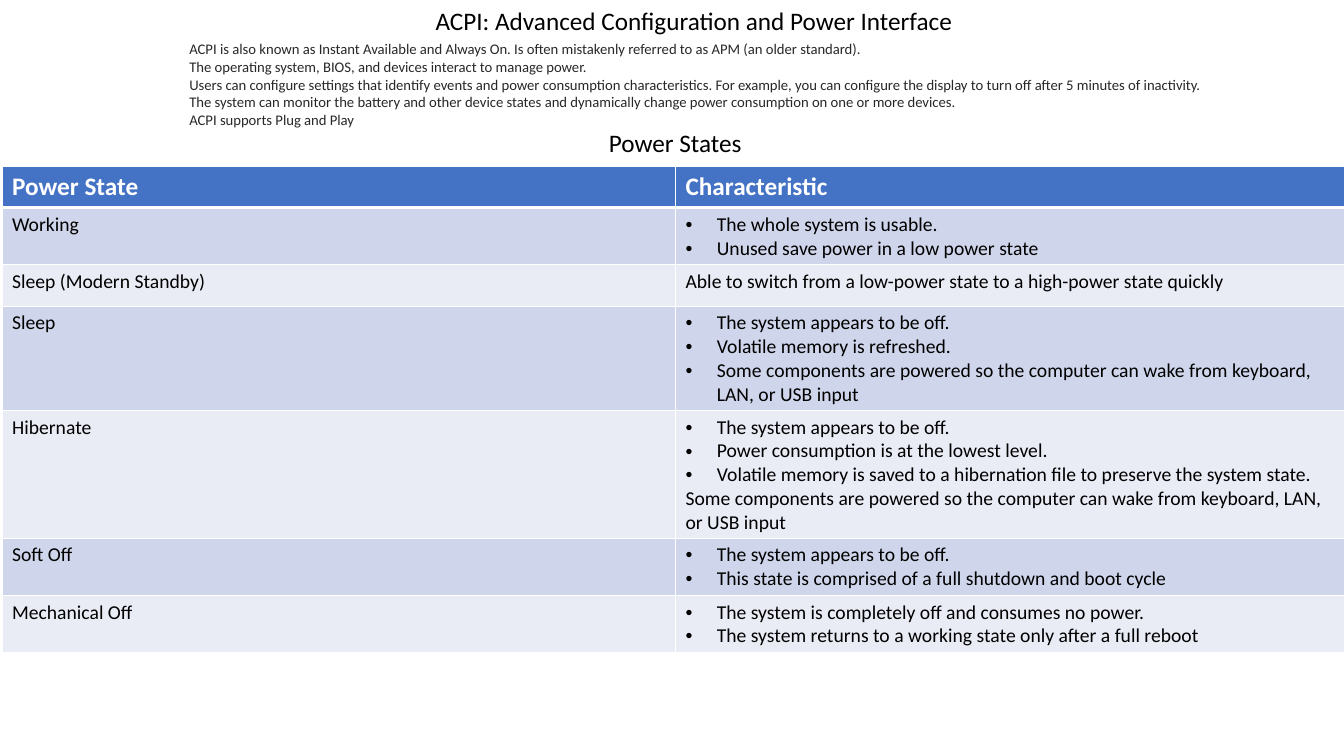
from lxml import etree
from pptx import Presentation
from pptx import util as u
from pptx.dml.color import RGBColor
from pptx.enum import text
from pptx.oxml import ns

HEADER = ("Power State", "Characteristic")
WAKE = "Some components are powered so the computer can wake from keyboard, LAN, or USB input"
OFF = "• The system appears to be off."

# A leading "• " marks a bulleted paragraph
STATES = [
    ("Working", ["• The whole system is usable.",
                 "• Unused save power in a low power state"]),
    ("Sleep (Modern Standby)",
     ["Able to switch from a low-power state to a high-power state quickly"]),
    ("Sleep", [OFF, "• Volatile memory is refreshed.", "• " + WAKE]),
    ("Hibernate", [OFF, "• Power consumption is at the lowest level.",
                   "• Volatile memory is saved to a hibernation file to preserve the system state.",
                   WAKE]),
    ("Soft Off", [OFF, "• This state is comprised of a full shutdown and boot cycle"]),
    ("Mechanical Off", ["• The system is completely off and consumes no power.",
                        "• The system returns to a working state only after a full reboot"]),
]

FACTS = [
    "ACPI is also known as Instant Available and Always On. Is often mistakenly referred to as APM (an older standard).",
    "The operating system, BIOS, and devices interact to manage power.",
    "Users can configure settings that identify events and power consumption characteristics. "
    "For example, you can configure the display to turn off after 5 minutes of inactivity.",
    "The system can monitor the battery and other device states and dynamically change power "
    "consumption on one or more devices.",
    "ACPI supports Plug and Play",
]


def color(value):
    return RGBColor.from_string(value)


class SlideBuilder:
    font = "Calibri"
    black, gray, white = "000000", "282828", "FFFFFF"
    header_fill, bands = "4472C4", ("CFD5EA", "E9EBF5")

    def __init__(self, presentation):
        self.slide = presentation.slides.add_slide(presentation.slide_layouts[5])

    def add_lines(self, frame, lines, size, ink, bold=False):
        """Fill a text frame, one paragraph per line."""
        for index, line in enumerate(lines):
            paragraph = frame.paragraphs[0] if index == 0 else frame.add_paragraph()
            paragraph.alignment = text.PP_ALIGN.LEFT
            if line.startswith("• "):
                self.bullet(paragraph)
            run = paragraph.add_run()
            run.text = line.removeprefix("• ")
            for name, value in {"name": self.font, "size": u.Pt(size), "bold": bold}.items():
                setattr(run.font, name, value)
            run.font.color.rgb = color(ink)

    def bullet(self, paragraph):
        properties = paragraph._p.get_or_add_pPr()
        indent = u.Inches(0.31)
        properties.set("marL", str(indent))
        properties.set("indent", str(-indent))
        etree.SubElement(properties, ns.qn("a:buFont"), typeface="Arial")
        etree.SubElement(properties, ns.qn("a:buChar"), char="•")

    def place(self, shape, box, lines, size, ink):
        for name, value in zip(("left", "top", "width", "height"), box):
            setattr(shape, name, u.Inches(value))
        frame_format = {"word_wrap": True, "auto_size": text.MSO_AUTO_SIZE.SHAPE_TO_FIT_TEXT,
                        "vertical_anchor": text.MSO_ANCHOR.TOP}
        for name, value in frame_format.items():
            setattr(shape.text_frame, name, value)
        self.add_lines(shape.text_frame, lines, size, ink)

    def title(self, box, line):
        self.place(self.slide.shapes.title, box, [line], 18, self.black)

    def text_box(self, box, lines, size, ink):
        shape = self.slide.shapes.add_textbox(*map(u.Inches, box))
        self.place(shape, box, lines, size, ink)

    def border(self, cell, widths):
        """Draw white borders; widths go left, right, top, bottom."""
        properties = cell._tc.get_or_add_tcPr()
        for index, (side, width) in enumerate(zip("LRTB", widths)):
            line = etree.Element(ns.qn("a:ln" + side), w=str(u.Pt(width)))
            fill = etree.SubElement(line, ns.qn("a:solidFill"))
            etree.SubElement(fill, ns.qn("a:srgbClr"), val=self.white)
            properties.insert(index, line)

    def cell(self, cell, lines, fill, size, ink, bold, widths):
        cell.fill.solid()
        cell.fill.fore_color.rgb = color(fill)
        self.add_lines(cell.text_frame, lines, size, ink, bold)
        self.border(cell, widths)

    def table(self, left, top, width, row_height, header, states):
        count = len(states) + 1
        table = self.slide.shapes.add_table(
            count, len(header), *map(u.Inches, (left, top, width, row_height * count))).table
        for column, heading in enumerate(header):
            self.cell(table.cell(0, column), [heading], self.header_fill, 18,
                      self.white, True, (1, 1, 1, 3))
        for row, (state, traits) in enumerate(states, 1):
            widths = (1, 1, 3 if row == 1 else 1, 1)
            for column, lines in enumerate(([state], traits)):
                self.cell(table.cell(row, column), lines, self.bands[(row - 1) % 2], 14,
                          self.black, False, widths)


def main():
    presentation = Presentation()
    presentation.slide_width, presentation.slide_height = u.Inches(13.33), u.Inches(7.5)
    builder = SlideBuilder(presentation)

    # Heading and introduction
    builder.title((4.22, 0, 5.48, 0.4), "ACPI: Advanced Configuration and Power Interface")
    builder.text_box((1.78, 0.35, 10.51, 0.98), FACTS, 10.5, builder.gray)

    # Power states
    builder.text_box((5.94, 1.21, 1.55, 0.4), ["Power States"], 18, builder.black)
    builder.table(0.02, 1.65, 13.36, 0.41, HEADER, STATES)

    presentation.save("out.pptx")


if __name__ == "__main__":
    main()
